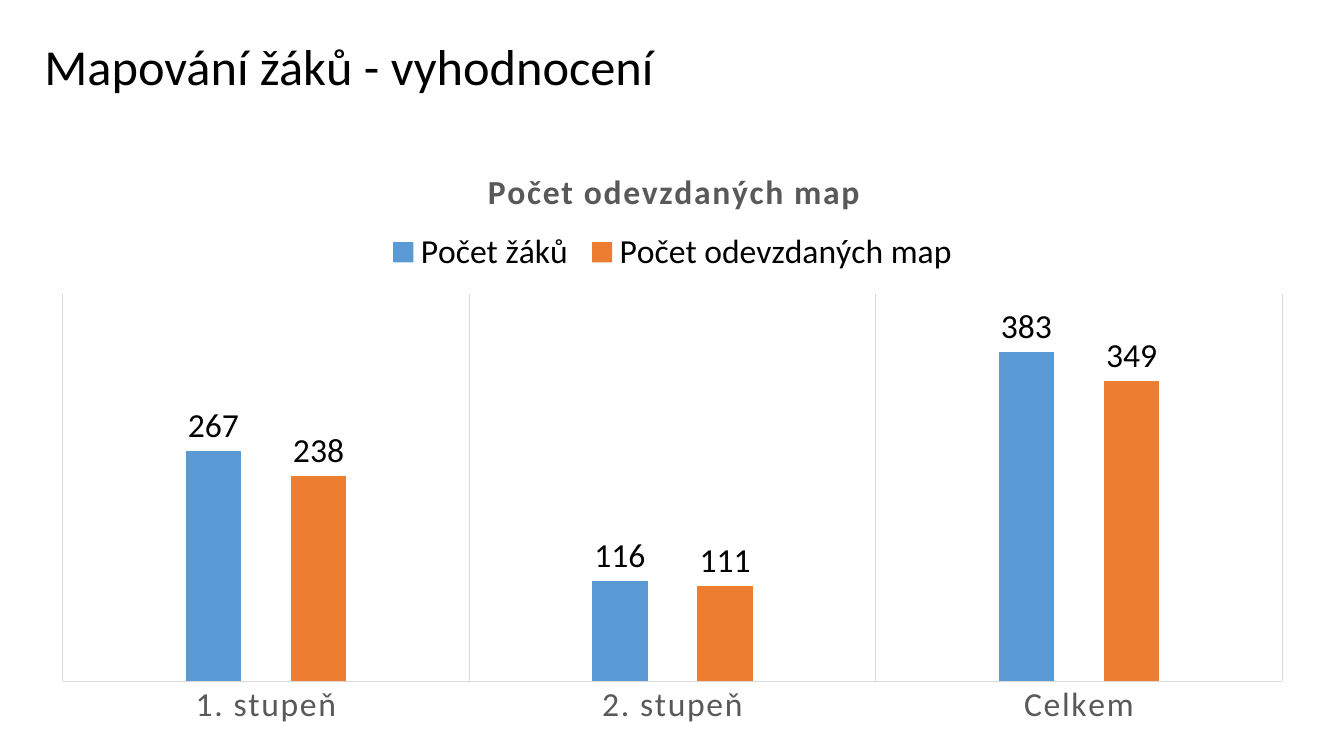
from dataclasses import dataclass

from lxml.etree import SubElement
from pptx import Presentation
from pptx.chart.data import CategoryChartData as ChartData
from pptx.dml.color import RGBColor as Color
from pptx.enum.chart import XL_CHART_TYPE as ChartType
from pptx.enum.chart import XL_LABEL_POSITION as LabelPosition
from pptx.enum.chart import XL_LEGEND_POSITION as LegendPosition
from pptx.enum.chart import XL_TICK_MARK as TickMark
from pptx.enum.text import MSO_ANCHOR as Anchor
from pptx.enum.text import MSO_AUTO_SIZE as AutoSize
from pptx.enum.text import PP_ALIGN as Align
from pptx.oxml.ns import qn
from pptx.util import Inches, Pt


@dataclass(frozen=True)
class Theme:
    """Colours, type sizes and font of the slide."""
    font: str = "Calibri"
    text: str = "000000"
    muted: str = "595959"
    rule: str = "D9D9D9"
    series: tuple = ("5B9BD5", "ED7D31")
    title_size: int = 36
    chart_size: int = 24
    rule_width: float = 0.75
    letter_spacing: int = 120


THEME = Theme()
SLIDE_SIZE = (13.33, 7.5)
TITLE_BOX = (0.34, 0, 12.99, 1.38)
CHART_BOX = (0.37, 1.38, 12.6, 5.91)
STAGES = ("1. stupeň", "2. stupeň", "Celkem")
COUNTS = {
    "Počet žáků": (267, 116, 383),
    "Počet odevzdaných map": (238, 111, 349),
}


def format_font(font, size, color, bold=False):
    """Apply the theme font with a size and colour."""
    font.name, font.size, font.bold = THEME.font, Pt(size), bold
    font.color.rgb = Color.from_string(color)


def write_text(frame, text, size, color, bold=False, align=None, line_spacing=None):
    """Write one formatted paragraph into a text frame."""
    paragraph = frame.paragraphs[0]
    paragraph.alignment = align
    paragraph.line_spacing = line_spacing
    run = paragraph.add_run()
    run.text = text
    format_font(run.font, size, color, bold)


def format_rule(line):
    """Give an axis or grid line the thin rule style."""
    line.color.rgb = Color.from_string(THEME.rule)
    line.width = Pt(THEME.rule_width)


def place_part(part, following, inner=False, **shares):
    """Place a chart part by shares of the chart's size."""
    for layout in part.findall(qn("c:layout")):
        part.remove(layout)
    layout = part.makeelement(qn("c:layout"))
    manual = SubElement(layout, qn("c:manualLayout"))
    if inner:
        SubElement(manual, qn("c:layoutTarget")).set("val", "inner")
    for side in ("x", "y"):
        SubElement(manual, qn(f"c:{side}Mode")).set("val", "edge")
    for name, share in shares.items():
        SubElement(manual, qn(f"c:{name}")).set("val", str(share))
    part.find(qn(following)).addprevious(layout)


def space_letters(part):
    """Widen the letter spacing within a chart part."""
    for tag in ("a:rPr", "a:defRPr"):
        for properties in part.iter(qn(tag)):
            properties.set("spc", str(THEME.letter_spacing))


def add_title(slide, box, text):
    """Place and fill the title placeholder."""
    title = slide.shapes.title
    title.left, title.top, title.width, title.height = map(Inches, box)
    frame = title.text_frame
    frame.auto_size, frame.word_wrap = AutoSize.NONE, True
    frame.vertical_anchor = Anchor.MIDDLE
    write_text(frame, text, THEME.title_size, THEME.text,
               align=Align.LEFT, line_spacing=0.9)


def format_axes(chart):
    """Show the category axis with its grid and hide the value axis."""
    category = chart.category_axis
    category.major_tick_mark = category.minor_tick_mark = TickMark.NONE
    category.has_major_gridlines = True
    format_rule(category.major_gridlines.format.line)
    format_rule(category.format.line)
    format_font(category.tick_labels.font, THEME.chart_size, THEME.muted)
    value = chart.value_axis
    value.minimum_scale, value.maximum_scale = 0, 450
    value.has_major_gridlines = value.visible = False


def format_columns(plot):
    """Colour the columns and label their values."""
    plot.gap_width, plot.overlap, plot.vary_by_categories = 444, -90, False
    for series, color in zip(plot.series, THEME.series):
        series.format.fill.solid()
        series.format.fill.fore_color.rgb = Color.from_string(color)
        labels = series.data_labels
        labels.show_value = True
        labels.position = LabelPosition.OUTSIDE_END
        format_font(labels.font, THEME.chart_size, THEME.text)


def add_count_chart(slide, box, title, stages, counts):
    """Draw the clustered columns with title and legend inside the box."""
    data = ChartData()
    data.categories = stages
    for name, values in counts.items():
        data.add_series(name, values)
    chart = slide.shapes.add_chart(
        ChartType.COLUMN_CLUSTERED, *map(Inches, box), data).chart
    format_font(chart.font, 10, THEME.text)
    chart.has_title = True
    write_text(chart.chart_title.text_frame, title, THEME.chart_size,
               THEME.muted, bold=True)
    chart.has_legend = True
    chart.legend.position = LegendPosition.TOP
    chart.legend.include_in_layout = False
    format_font(chart.legend.font, THEME.chart_size, THEME.text)
    format_axes(chart)
    format_columns(chart.plots[0])
    area = chart.element.find(".//" + qn("c:plotArea"))
    heading = chart.element.find(".//" + qn("c:title"))
    legend = chart.element.find(".//" + qn("c:legend"))
    place_part(area, "c:barChart", inner=True, x=0.02, y=0.26, w=0.96, h=0.65)
    place_part(heading, "c:overlay", x=0.35, y=0.04)
    place_part(legend, "c:overlay", x=0.27, y=0.15, w=0.46, h=0.08)
    space_letters(heading)
    space_letters(area.find(qn("c:catAx")))


def main():
    """Build and save the presentation."""
    presentation = Presentation()
    presentation.slide_width, presentation.slide_height = map(Inches, SLIDE_SIZE)
    slide = presentation.slides.add_slide(presentation.slide_layouts[5])
    add_title(slide, TITLE_BOX, "Mapování žáků - vyhodnocení")
    add_count_chart(slide, CHART_BOX, "Počet odevzdaných map", STAGES, COUNTS)
    presentation.save("out.pptx")


if __name__ == "__main__":
    main()
